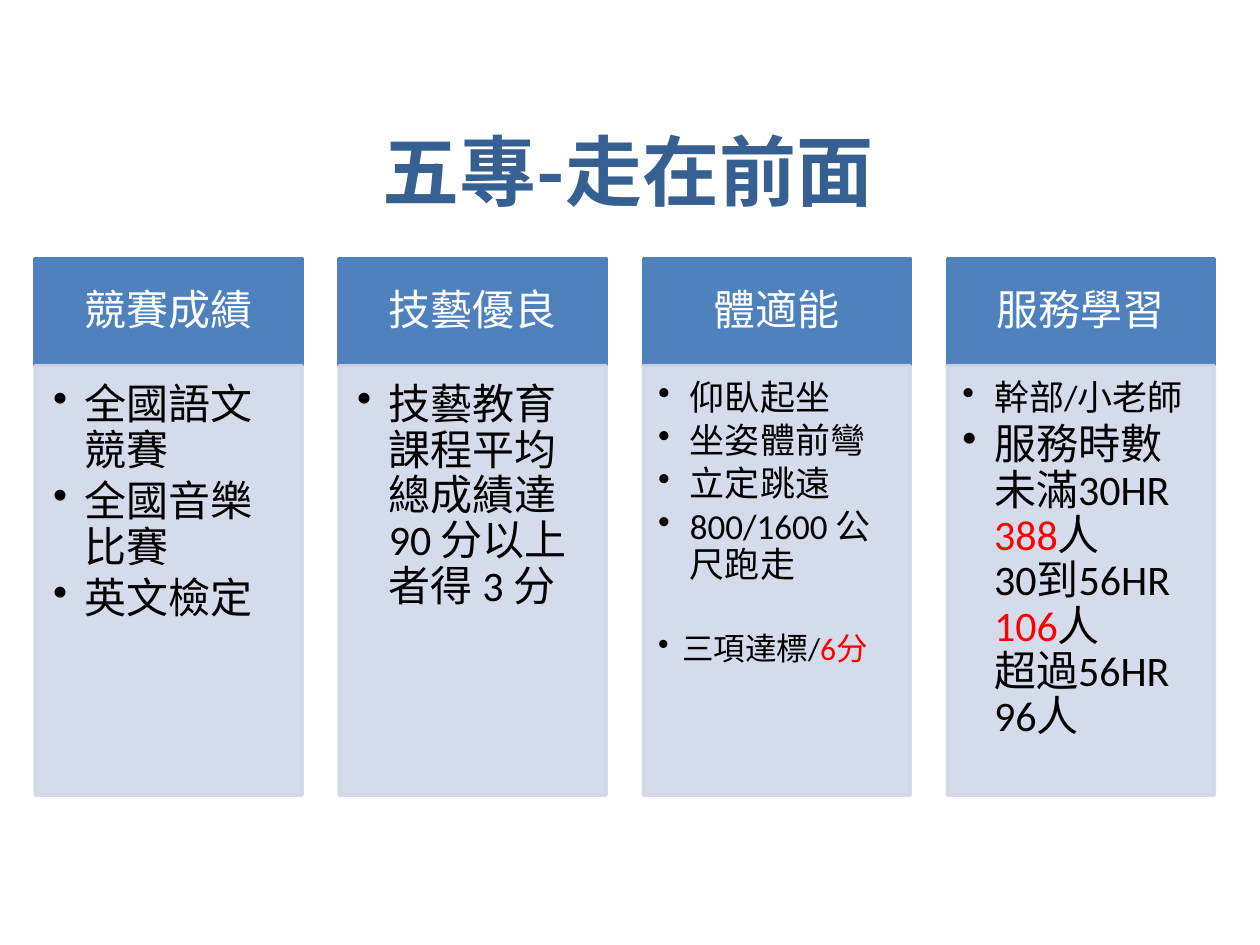
from lxml import etree
from pptx import Presentation
from pptx import util as u
from pptx.dml.color import RGBColor
from pptx.enum import shapes, text
from pptx.oxml.ns import qn

BLUE, PALE, NAVY = "4F81BD", "D0D8E8", "376092"
WHITE, BLACK, RED = "FFFFFF", "000000", "FF0000"
LATIN, CJK = "Calibri", "Noto Sans CJK SC"

TITLE = "五專-走在前面"
WIDE_INSETS = (0.36, 0.36, 0.48, 0.53)
SLIM_INSETS = (0.3, 0.3, 0.4, 0.44)
HEADER_INSETS = (0.48, 0.28, 0.48, 0.28)

# fmt: off
COLUMNS = [
    ("競賽成績", WIDE_INSETS, [
        (24, 0, [("全國語文競賽", BLACK)]),
        (24, 0, [("全國音樂比賽", BLACK)]),
        (24, 0, [("英文檢定", BLACK)]),
    ]),
    ("技藝優良", WIDE_INSETS, [
        (24, 0, [("技藝教育課程平均總成績達 90 分以上者得 3 分", BLACK)]),
    ]),
    ("體適能", SLIM_INSETS, [
        (20, 0, [("仰臥起坐", BLACK)]),
        (20, 0, [("坐姿體前彎", BLACK)]),
        (20, 0, [("立定跳遠", BLACK)]),
        (20, 0, [("800/1600 公尺跑走", BLACK)]),
        (18, 24.5, [("三項達標/", BLACK), ("6分", RED)]),
    ]),
    ("服務學習", SLIM_INSETS, [
        (20, 0, [("幹部/小老師", BLACK)]),
        (24, 0, [("服務時數未滿30HR\n", BLACK), ("388", RED), ("人\n30到56HR\n", BLACK),
                 ("106", RED), ("人\n超過56HR\n96人", BLACK)]),
    ]),
]
# fmt: on

LEFT, TOP, WIDTH, PITCH = 0.71, 5.21, 5.38, 6.13
HEADER_HEIGHT, BODY_HEIGHT = 2.16, 8.66


def rgb(color):
    return RGBColor.from_string(color)


def add_run(paragraph, words, size, color, font=LATIN, bold=False):
    for number, line in enumerate(words.split("\n")):
        if number:
            paragraph.add_line_break()
        if not line:
            continue
        run = paragraph.add_run()
        run.text = line
        run.font.size = u.Pt(size)
        run.font.bold = bold
        run.font.name = font
        run.font.color.rgb = rgb(color)
        east_asian = etree.SubElement(run.font._element, qn("a:ea"))
        east_asian.set("typeface", CJK)


def add_panel(slide, left, top, height, color, insets, anchor, opacity=None):
    panel = slide.shapes.add_shape(
        shapes.MSO_SHAPE.RECTANGLE, u.Cm(left), u.Cm(top), u.Cm(WIDTH), u.Cm(height))
    panel.shadow.inherit = False
    panel.fill.solid()
    panel.fill.fore_color.rgb = rgb(color)
    panel.line.color.rgb = rgb(color)
    panel.line.width = u.Pt(2)
    if opacity:
        for shade in panel._element.spPr.iter(qn("a:srgbClr")):
            etree.SubElement(shade, qn("a:alpha")).set("val", str(opacity * 1000))
    frame = panel.text_frame
    frame.word_wrap = True
    frame.vertical_anchor = anchor
    (frame.margin_left, frame.margin_top,
     frame.margin_right, frame.margin_bottom) = map(u.Cm, insets)
    return frame


def add_bullet(paragraph, size):
    properties = paragraph._p.get_or_add_pPr()
    indent = u.Cm(0.48 if size < 20 else 0.64)
    properties.set("marL", str(indent))
    properties.set("indent", str(-indent))
    etree.SubElement(properties, qn("a:buChar")).set("char", "•")


def add_column(slide, left, heading, insets, items):
    header = add_panel(slide, left, TOP, HEADER_HEIGHT, BLUE, HEADER_INSETS,
                       text.MSO_ANCHOR.MIDDLE)
    label = header.paragraphs[0]
    label.alignment = text.PP_ALIGN.CENTER
    label.line_spacing = 0.9
    add_run(label, heading, 24, WHITE)

    body = add_panel(slide, left, TOP + HEADER_HEIGHT, BODY_HEIGHT, PALE, insets,
                     text.MSO_ANCHOR.TOP, opacity=90)
    for number, (size, gap, pieces) in enumerate(items):
        item = body.add_paragraph() if number else body.paragraphs[0]
        add_bullet(item, size)
        item.level = 1
        item.alignment = text.PP_ALIGN.LEFT
        item.line_spacing = 0.9
        item.space_after = u.Pt(size * 0.15)
        if gap:
            item.space_before = u.Pt(gap)
        item.font.size = u.Pt(size)
        item.font.color.rgb = rgb(BLACK)
        for words, color in pieces:
            add_run(item, words, size, color)


def main():
    deck = Presentation()
    deck.slide_width, deck.slide_height = u.Cm(25.4), u.Cm(19.05)
    slide = deck.slides.add_slide(deck.slide_layouts[5])

    title = slide.shapes.title
    title.left, title.top = u.Cm(1.19), u.Cm(2.11)
    title.width, title.height = u.Cm(22.94), u.Cm(2.62)
    title.text_frame.vertical_anchor = text.MSO_ANCHOR.MIDDLE
    headline = title.text_frame.paragraphs[0]
    headline.alignment = text.PP_ALIGN.CENTER
    add_run(headline, TITLE, 44, NAVY, font=CJK, bold=True)

    for number, column in enumerate(COLUMNS):
        add_column(slide, LEFT + number * PITCH, *column)

    deck.save("out.pptx")


if __name__ == "__main__":
    main()
